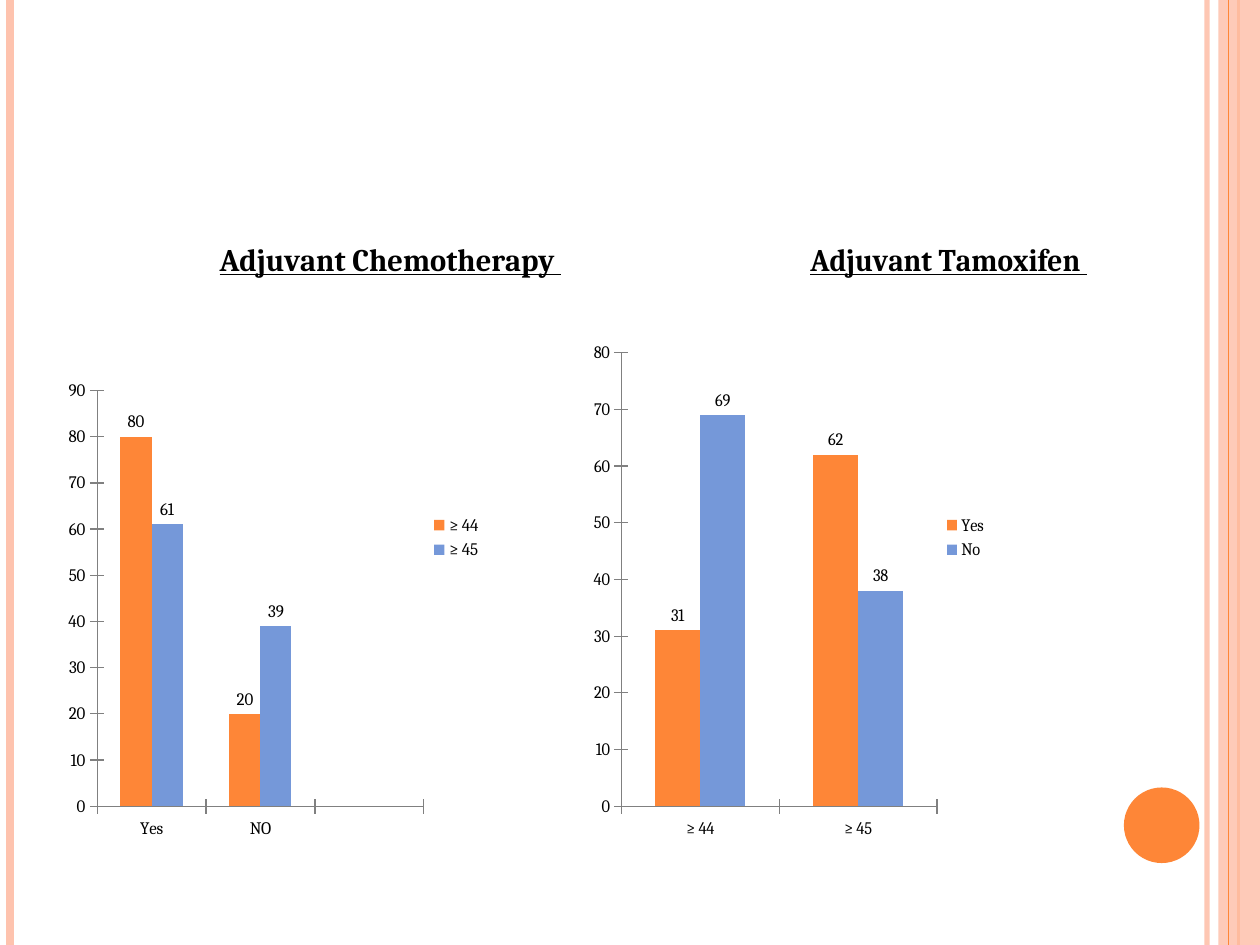
"""Build a slide comparing adjuvant chemotherapy and tamoxifen by age group."""
from dataclasses import dataclass
from typing import Optional

from lxml import etree
from pptx import Presentation
from pptx import util as u
from pptx.chart import data
from pptx.dml.color import RGBColor
from pptx.enum import chart as charts
from pptx.enum import shapes
from pptx.oxml.ns import qn

COLORS = {"orange": "FE8637", "peach": "FEC3AE", "blue": "7598D9",
          "text": "000000", "axis": "808080"}
FONT = "Cambria"
PAGE_HEIGHT = 7.5
CHART_TOP, CHART_WIDTH, CHART_HEIGHT = 1.75, 4, 5


@dataclass
class Stripe:
    x: float
    width: float
    color: str
    opacity: int = 100


@dataclass
class BarPanel:
    left: float
    title: str
    title_x: float
    plot_y: float
    categories: list[str]
    series: dict[str, list[Optional[int]]]


STRIPES_BEHIND = [Stripe(9.58, 3, "peach", 93), Stripe(0.08, 4.5, "peach"),
                  Stripe(9.83, 1.5, "orange")]
STRIPE_FRONT = Stripe(9.75, 0.75, "orange")
PANELS = [
    BarPanel(4.67, "Adjuvant Tamoxifen ", 0.46, 0.21, ["≥ 44", "≥ 45"],
             {"Yes": [31, 62], "No": [69, 38]}),
    BarPanel(0.5, "Adjuvant Chemotherapy ", 0.31, 0.27, ["Yes", "NO", ""],
             {"≥ 44": [80, 20, None], "≥ 45": [61, 39, None]}),
]


def rgb(name: str) -> RGBColor:
    """Return a named colour."""
    return RGBColor.from_string(COLORS[name])


def set_format(target, **values) -> None:
    """Set each format value on the target."""
    for name, value in values.items():
        setattr(target, name, value)


def set_opacity(shape, percent: int) -> None:
    """Make the first colour of a shape partly transparent."""
    color = shape._element.spPr.find(".//" + qn("a:srgbClr"))
    etree.SubElement(color, qn("a:alpha"), val=str(percent * 1000))


def draw_stripe(page, stripe: Stripe) -> None:
    """Draw a full-height vertical line."""
    x = u.Inches(stripe.x)
    line = page.shapes.add_connector(
        shapes.MSO_CONNECTOR.STRAIGHT, x, 0, x, u.Inches(PAGE_HEIGHT))
    line.line.width = u.Pt(stripe.width)
    line.line.color.rgb = rgb(stripe.color)
    if stripe.opacity < 100:
        set_opacity(line, stripe.opacity)
    etree.SubElement(line._element.spPr, qn("a:effectLst"))


def draw_shape(page, kind, left: float, top: float, width: float,
               height: float, color: str):
    """Draw a filled shape with no outline."""
    shape = page.shapes.add_shape(
        kind, *map(u.Inches, (left, top, width, height)))
    shape.shadow.inherit = False
    shape.fill.solid()
    shape.fill.fore_color.rgb = rgb(color)
    shape.line.fill.background()
    return shape


def set_layout(parent, index: int, **values) -> None:
    """Place a chart part at fractions of the chart area."""
    for old in parent.findall(qn("c:layout")):
        parent.remove(old)
    layout = etree.Element(qn("c:layout"))
    parent.insert(index, layout)
    manual = etree.SubElement(layout, qn("c:manualLayout"))
    for name, value in values.items():
        etree.SubElement(manual, qn("c:" + name), val=str(value))


def draw_panel(page, panel: BarPanel) -> None:
    """Draw a clustered column chart with its title and legend."""
    content = data.CategoryChartData()
    content.categories = panel.categories
    for name, values in panel.series.items():
        content.add_series(name, values)
    frame = page.shapes.add_chart(
        charts.XL_CHART_TYPE.COLUMN_CLUSTERED, u.Inches(panel.left),
        u.Inches(CHART_TOP), u.Inches(CHART_WIDTH), u.Inches(CHART_HEIGHT),
        content)
    chart = frame.chart
    set_format(chart.font, name=FONT, size=u.Pt(10))
    chart.font.color.rgb = rgb("text")

    chart.has_title = True
    span = chart.chart_title.text_frame.paragraphs[0].add_run()
    span.text = panel.title
    set_format(span.font, name=FONT, size=u.Pt(18), bold=True, underline=True)
    span.font.color.rgb = rgb("text")

    chart.has_legend = True
    set_format(chart.legend, position=charts.XL_LEGEND_POSITION.RIGHT,
               include_in_layout=False)

    for axis in (chart.category_axis, chart.value_axis):
        set_format(axis, has_major_gridlines=False,
                   major_tick_mark=charts.XL_TICK_MARK.CROSS)
        axis.format.line.color.rgb = rgb("axis")

    plot = chart.plots[0]
    set_format(plot, vary_by_categories=False, gap_width=150, overlap=0)
    for series, color in zip(plot.series, ("orange", "blue")):
        series.format.fill.solid()
        series.format.fill.fore_color.rgb = rgb(color)
        set_format(series.data_labels, show_value=True,
                   position=charts.XL_LABEL_POSITION.OUTSIDE_END)

    title, area, legend = (
        chart.element.find(".//" + qn(tag))
        for tag in ("c:title", "c:plotArea", "c:legend"))
    title.find(qn("c:overlay")).set("val", "1")
    set_layout(title, 1, xMode="edge", yMode="edge", x=panel.title_x, y=0.02)
    set_layout(area, 0, layoutTarget="inner", xMode="edge", yMode="edge",
               x=0.07, y=panel.plot_y, w=0.67,
               h=round(0.93 - panel.plot_y, 2))
    set_layout(legend, 1, xMode="edge", yMode="edge", x=0.75, y=0.46)


def main() -> None:
    """Build and save the deck."""
    deck = Presentation()
    set_format(deck, slide_width=u.Inches(10),
               slide_height=u.Inches(PAGE_HEIGHT))
    page = deck.slides.add_slide(deck.slide_layouts[6])
    for stripe in STRIPES_BEHIND:
        draw_stripe(page, stripe)
    band = draw_shape(page, shapes.MSO_SHAPE.RECTANGLE,
                      9.67, 0, 0.33, PAGE_HEIGHT, "peach")
    set_opacity(band, 87)
    draw_stripe(page, STRIPE_FRONT)
    draw_shape(page, shapes.MSO_SHAPE.OVAL, 8.92, 6.25, 0.6, 0.6, "orange")
    for panel in PANELS:
        draw_panel(page, panel)
    deck.save("out.pptx")


if __name__ == "__main__":
    main()
